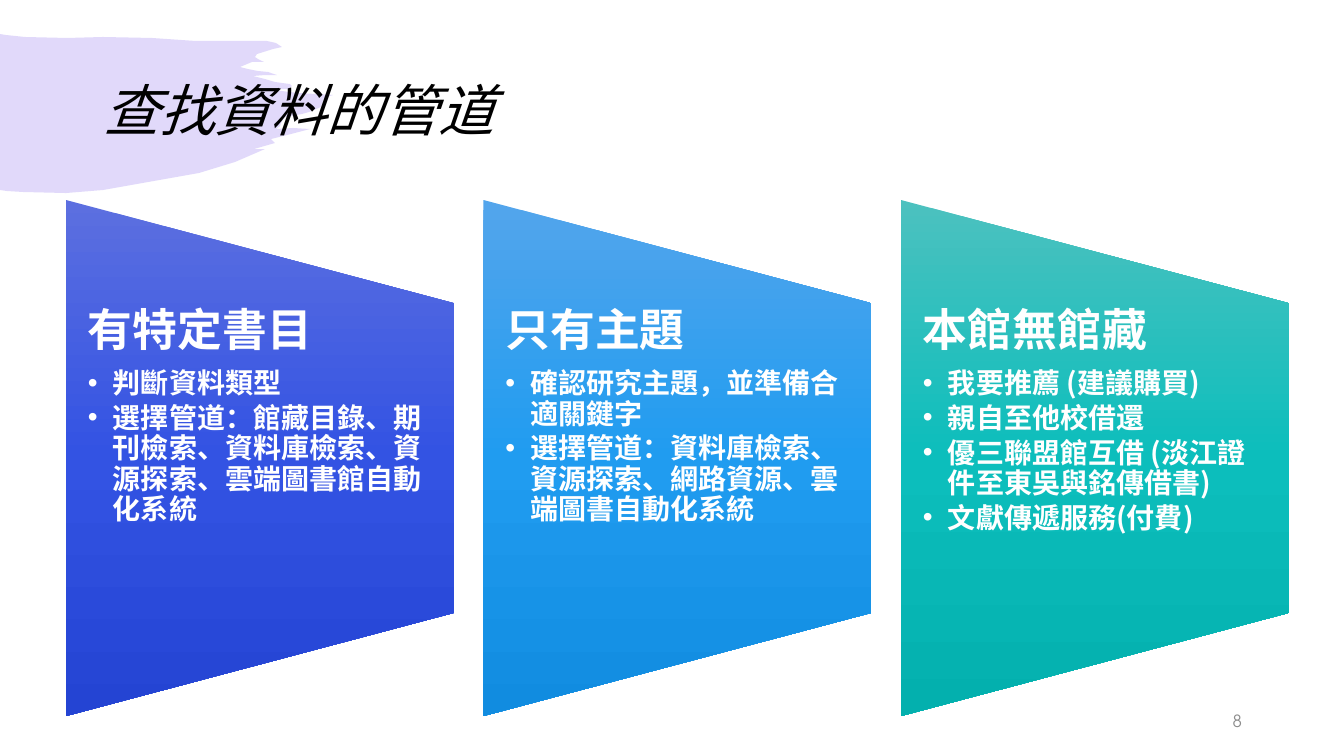
import dataclasses

import lxml.etree
import pptx
import pptx.dml.color
import pptx.enum.shapes
import pptx.enum.text
import pptx.oxml.ns
import pptx.util

PX = 914400 / 100.8
SLIDE_SIZE = (1344, 756)


@dataclasses.dataclass(frozen=True)
class Theme:
    font: str = "Noto Sans CJK SC"
    number_font: str = "TeX Gyre Adventor"
    title_size: int = 40
    heading_size: int = 32
    bullet_size: int = 20
    number_size: int = 12
    black: str = "000000"
    white: str = "FFFFFF"
    gray: str = "8C8C8C"
    brush: str = "6C45EA"
    brush_opacity: int = 20
    gradients: tuple = (
        ("5C6FE0", "3353E3", "2444D3"),
        ("53A5EC", "209CF0", "118CE0"),
        ("4CC1BF", "0CBEBC", "03B0AE"),
    )


THEME = Theme()

COLUMNS = (
    ("有特定書目", (
        "判斷資料類型",
        "選擇管道：館藏目錄、期刊檢索、資料庫檢索、資源探索、雲端圖書館自動化系統",
    )),
    ("只有主題", (
        "確認研究主題，並準備合適關鍵字",
        "選擇管道：資料庫檢索、資源探索、網路資源、雲端圖書自動化系統",
    )),
    ("本館無館藏", (
        "我要推薦 (建議購買)",
        "親自至他校借還",
        "優三聯盟館互借 (淡江證件至東吳與銘傳借書)",
        "文獻傳遞服務(付費)",
    )),
)

# Brush stroke outline, relative to its own top left corner
BRUSH_OUTLINE = (
    (0, 0), (6, 1), (25, 3), (67, 4), (103, 3), (152, 4), (196, 7), (250, 7),
    (267, 7), (276, 9), (282, 13), (273, 15), (257, 20), (255, 23), (258, 25),
    (264, 28), (252, 28), (240, 33), (248, 35), (258, 37), (268, 38), (277, 41),
    (265, 41), (253, 42), (265, 45), (275, 48), (282, 49), (290, 50), (292, 52),
    (289, 55), (286, 55), (265, 55), (298, 59), (333, 61), (324, 64), (321, 73),
    (309, 78), (302, 80), (285, 83), (282, 87), (280, 92), (276, 95), (293, 94),
    (310, 95), (291, 100), (271, 105), (275, 109), (254, 115), (265, 115),
    (235, 128), (199, 139), (103, 156), (66, 159), (23, 158), (7, 157), (0, 156),
)


def px(length):
    return pptx.util.Emu(round(length * PX))


def add_element(parent, tag, **attributes):
    element = lxml.etree.SubElement(parent, pptx.oxml.ns.qn(tag))
    for name, value in attributes.items():
        element.set(name, str(value))
    return element


def write_paragraph(paragraph, text, *, size, color, font=THEME.font, bold=False,
                    italic=False, align=None, line_spacing=None, space_after=0,
                    bullet_indent=0):
    properties = paragraph._p.get_or_add_pPr()
    if bullet_indent:
        properties.set("marL", str(px(bullet_indent)))
        properties.set("indent", str(-px(bullet_indent)))
        add_element(properties, "a:buFont", typeface="Arial")
        add_element(properties, "a:buChar", char="•")
    paragraph.alignment = align
    paragraph.line_spacing = line_spacing
    paragraph.space_before = pptx.util.Pt(0)
    paragraph.space_after = pptx.util.Pt(space_after)
    run = paragraph.add_run()
    run.text = text
    run.font.name = font
    run.font.size = pptx.util.Pt(size)
    run.font.bold = bold
    run.font.italic = italic
    run.font.color.rgb = pptx.dml.color.RGBColor.from_string(color)
    add_element(run._r.get_or_add_rPr(), "a:ea", typeface=font)


def add_text_box(slide, left, top, width, height, inset=10, inset_vertical=5,
                 anchor=pptx.enum.text.MSO_ANCHOR.TOP):
    box = slide.shapes.add_textbox(px(left), px(top), px(width), px(height))
    frame = box.text_frame
    frame.word_wrap = True
    frame.margin_left = frame.margin_right = px(inset)
    frame.margin_top = frame.margin_bottom = px(inset_vertical)
    frame.vertical_anchor = anchor
    return frame


def fill_gradient(shape, colors):
    shape.fill.gradient()
    gradient = shape._element.spPr.find(pptx.oxml.ns.qn("a:gradFill"))
    for child in list(gradient):
        gradient.remove(child)
    gradient.set("rotWithShape", "0")
    stops = add_element(gradient, "a:gsLst")
    for position, color in zip((0, 50000, 100000), colors):
        stop = add_element(stops, "a:gs", pos=position)
        add_element(stop, "a:srgbClr", val=color)
    add_element(gradient, "a:lin", ang=90 * 60000, scaled=0)


def draw_brush(slide, left, top):
    points = [(left + x, top + y) for x, y in BRUSH_OUTLINE]
    builder = slide.shapes.build_freeform(*points[0], scale=PX)
    builder.add_line_segments(points[1:], close=True)
    brush = builder.convert_to_shape()
    brush.shadow.inherit = False
    brush.line.fill.background()
    brush.fill.solid()
    brush.fill.fore_color.rgb = pptx.dml.color.RGBColor.from_string(THEME.brush)
    color = brush._element.spPr.find(".//" + pptx.oxml.ns.qn("a:srgbClr"))
    add_element(color, "a:alpha", val=THEME.brush_opacity * 1000)
    # Send behind the title
    slide.shapes._spTree.insert(2, brush._element)


def place_title(slide, left, top, width, height):
    title = slide.shapes.title
    title.left, title.top = px(left), px(top)
    title.width, title.height = px(width), px(height)
    frame = title.text_frame
    frame.vertical_anchor = pptx.enum.text.MSO_ANCHOR.MIDDLE
    write_paragraph(frame.paragraphs[0], "查找資料的管道", size=THEME.title_size,
                    color=THEME.black, italic=True, line_spacing=0.9,
                    align=pptx.enum.text.PP_ALIGN.LEFT)


def draw_column(slide, left, top, width, height, heading, bullets, colors):
    # Trapezoid, turned so that its long side stands on the left
    panel = slide.shapes.add_shape(
        pptx.enum.shapes.MSO_SHAPE.FLOWCHART_MANUAL_OPERATION,
        px(left + (width - height) / 2), px(top + (height - width) / 2),
        px(height), px(width))
    panel.rotation = 270
    panel.shadow.inherit = False
    panel.line.fill.background()
    fill_gradient(panel, colors)

    # Heading and bullets
    frame = add_text_box(slide, left, top + height / 5, width, height * 3 / 5,
                         inset=22, inset_vertical=0)
    write_paragraph(frame.paragraphs[0], heading, size=THEME.heading_size,
                    color=THEME.white, bold=True, space_after=10,
                    line_spacing=pptx.util.Pt(37))
    for bullet in bullets:
        write_paragraph(frame.add_paragraph(), bullet, size=THEME.bullet_size,
                        color=THEME.white, bold=True, space_after=3,
                        line_spacing=pptx.util.Pt(21.7), bullet_indent=25)


def draw_columns(slide, left, top, width, height, column_width=388):
    step = (width - column_width) / (len(COLUMNS) - 1)
    for index, (heading, bullets) in enumerate(COLUMNS):
        draw_column(slide, left + index * step, top, column_width, height,
                    heading, bullets, THEME.gradients[index])


def draw_slide_number(slide, left, top, width, height):
    frame = add_text_box(slide, left, top, width, height,
                         anchor=pptx.enum.text.MSO_ANCHOR.MIDDLE)
    write_paragraph(frame.paragraphs[0], "8", size=THEME.number_size,
                    color=THEME.gray, font=THEME.number_font,
                    align=pptx.enum.text.PP_ALIGN.RIGHT)


def main():
    presentation = pptx.Presentation()
    presentation.slide_width, presentation.slide_height = map(px, SLIDE_SIZE)
    slide = presentation.slides.add_slide(presentation.slide_layouts[5])
    draw_brush(slide, 0, 34)
    place_title(slide, 93, 40, 1159, 146)
    draw_slide_number(slide, 950, 701, 302, 40)
    draw_columns(slide, 66, 200, 1223, 516)
    presentation.save("out.pptx")


if __name__ == "__main__":
    main()
